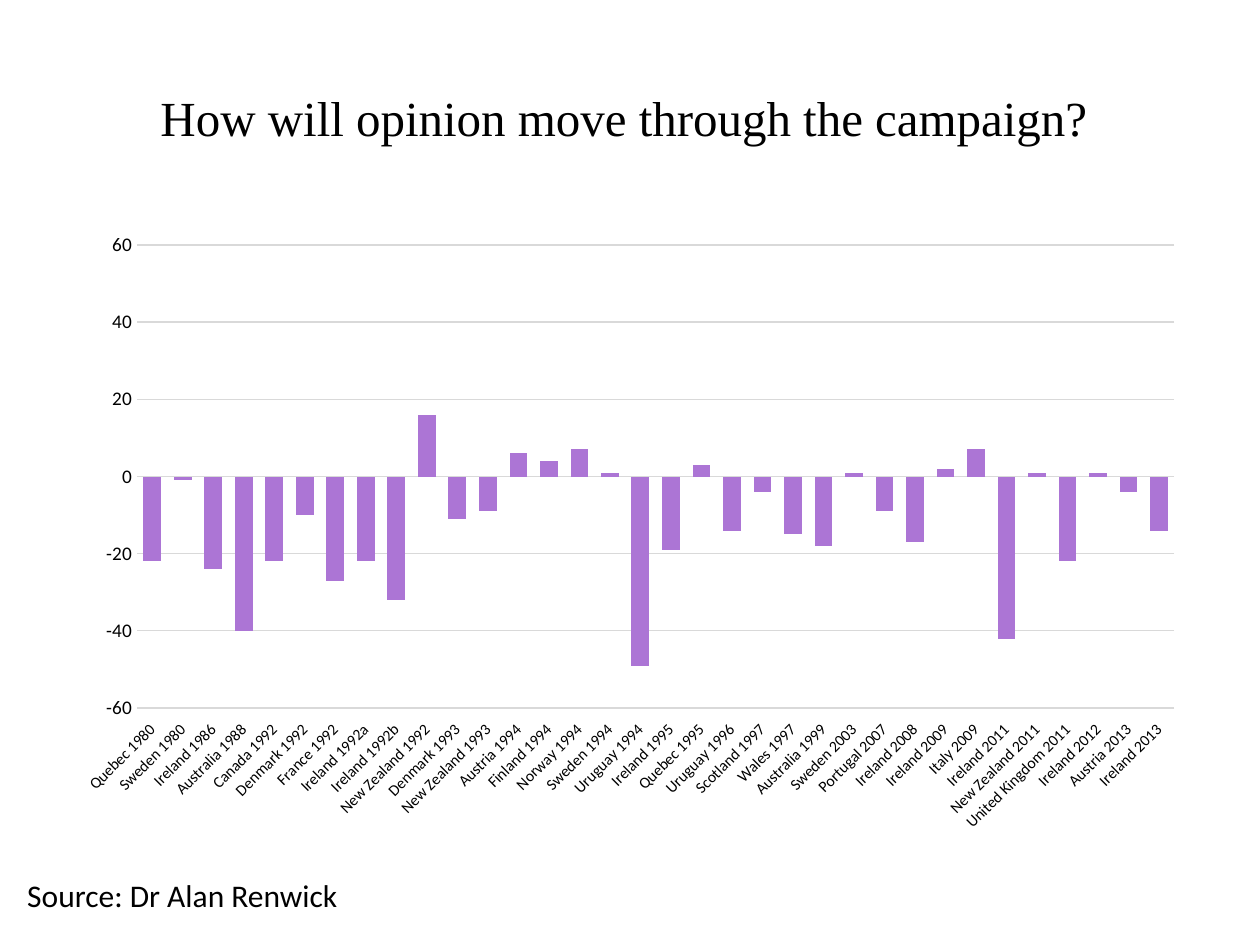
from pptx import Presentation
from pptx.chart.data import CategoryChartData
from pptx.dml.color import RGBColor
from pptx.enum.chart import XL_CHART_TYPE, XL_TICK_LABEL_POSITION, XL_TICK_MARK
from pptx.enum.text import MSO_ANCHOR, PP_ALIGN
from pptx.util import Cm, Pt

COLUMN_CLUSTERED = XL_CHART_TYPE.COLUMN_CLUSTERED
LABELS_LOW = XL_TICK_LABEL_POSITION.LOW
NO_TICKS = XL_TICK_MARK.NONE
MIDDLE = MSO_ANCHOR.MIDDLE
CENTER = PP_ALIGN.CENTER
BLACK = RGBColor(0x00, 0x00, 0x00)
GREY = RGBColor(0xD9, 0xD9, 0xD9)
PURPLE = RGBColor(0xAC, 0x75, 0xD5)

OPINION_CHANGES = [
    ("Quebec 1980", -22), ("Sweden 1980", -1), ("Ireland 1986", -24),
    ("Australia 1988", -40), ("Canada 1992", -22), ("Denmark 1992", -10),
    ("France 1992", -27), ("Ireland 1992a", -22), ("Ireland 1992b", -32),
    ("New Zealand 1992", 16), ("Denmark 1993", -11), ("New Zealand 1993", -9),
    ("Austria 1994", 6), ("Finland 1994", 4), ("Norway 1994", 7),
    ("Sweden 1994", 1), ("Uruguay 1994", -49), ("Ireland 1995", -19),
    ("Quebec 1995", 3), ("Uruguay 1996", -14), ("Scotland 1997", -4),
    ("Wales 1997", -15), ("Australia 1999", -18), ("Sweden 2003", 1),
    ("Portugal 2007", -9), ("Ireland 2008", -17), ("Ireland 2009", 2),
    ("Italy 2009", 7), ("Ireland 2011", -42), ("New Zealand 2011", 1),
    ("United Kingdom 2011", -22), ("Ireland 2012", 1), ("Austria 2013", -4),
    ("Ireland 2013", -14),
]


def set_font(font, **values):
    font.color.rgb = BLACK
    for name, value in values.items():
        setattr(font, name, value)


presentation = Presentation()
presentation.slide_width = Cm(25.4)
presentation.slide_height = Cm(19.05)
slide = presentation.slides.add_slide(presentation.slide_layouts[5])

title = slide.shapes.title
title_place = {"left": Cm(1.27), "top": Cm(0.76), "width": Cm(22.86), "height": Cm(3.18)}
for name, value in title_place.items():
    setattr(title, name, value)
title.text_frame.text = "How will opinion move through the campaign? "
title.text_frame.vertical_anchor = MIDDLE
title_paragraph = title.text_frame.paragraphs[0]
title_paragraph.alignment = CENTER
set_font(title_paragraph.runs[0].font, name="Times New Roman", size=Pt(28))

chart_data = CategoryChartData()
chart_data.categories = [referendum for referendum, change in OPINION_CHANGES]
chart_data.add_series("Series 1", [change for referendum, change in OPINION_CHANGES])
chart = slide.shapes.add_chart(
    COLUMN_CLUSTERED, Cm(1.27), Cm(4.45), Cm(22.86), Cm(12.57), chart_data
).chart
chart.has_legend = False
chart.has_title = False
set_font(chart.font, name="Calibri", size=Pt(11))

plot = chart.plots[0]
plot.gap_width = 72
plot.overlap = -27
plot.vary_by_categories = False
series = plot.series[0]
series.invert_if_negative = False
series.format.fill.solid()
series.format.fill.fore_color.rgb = PURPLE

category_axis = chart.category_axis
value_axis = chart.value_axis
for axis in (category_axis, value_axis):
    axis.major_tick_mark = NO_TICKS
    axis.minor_tick_mark = NO_TICKS
category_axis.tick_label_position = LABELS_LOW
set_font(category_axis.tick_labels.font, name="Calibri", size=Pt(9))
value_axis.minimum_scale = -60
value_axis.maximum_scale = 60
value_axis.major_unit = 20
value_axis.has_major_gridlines = True
value_axis.format.line.fill.background()
for line in (category_axis.format.line, value_axis.major_gridlines.format.line):
    line.color.rgb = GREY
    line.width = Pt(0.75)

source = slide.shapes.add_textbox(Cm(0.3), Cm(17.53), Cm(19.61), Cm(1.02))
source.text_frame.word_wrap = True
source.text_frame.text = "Source: Dr Alan Renwick"
set_font(source.text_frame.paragraphs[0].runs[0].font, name="Calibri", size=Pt(18))

presentation.save("out.pptx")
